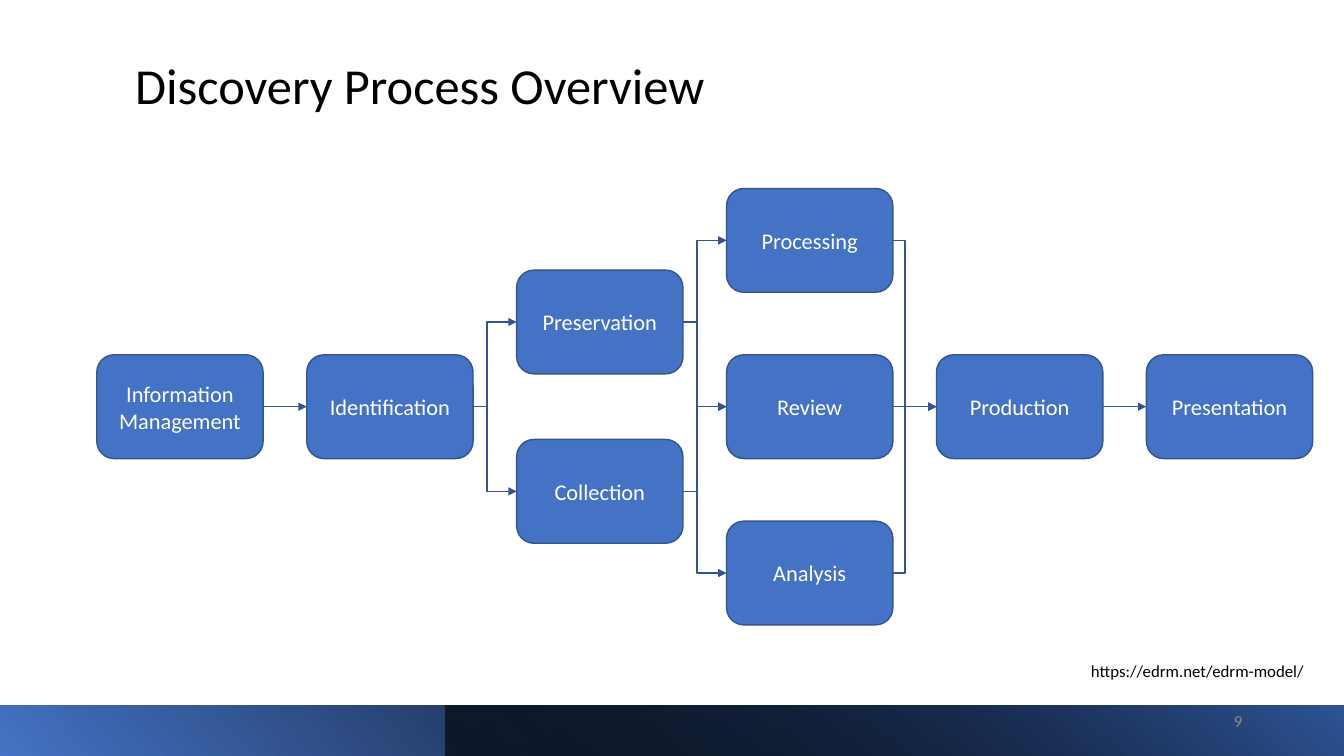
"""Build the discovery process overview slide."""
from lxml import etree
from pptx import Presentation
from pptx.dml.color import RGBColor
from pptx.enum.shapes import MSO_CONNECTOR, MSO_SHAPE
from pptx.enum.text import MSO_ANCHOR, PP_ALIGN
from pptx.oxml.ns import qn
from pptx.util import Inches, Pt

STRAIGHT, ELBOW = MSO_CONNECTOR.STRAIGHT, MSO_CONNECTOR.ELBOW
RECTANGLE, ROUNDED = MSO_SHAPE.RECTANGLE, MSO_SHAPE.ROUNDED_RECTANGLE
TOP, MIDDLE = MSO_ANCHOR.TOP, MSO_ANCHOR.MIDDLE
LEFT, CENTER, RIGHT = PP_ALIGN.LEFT, PP_ALIGN.CENTER, PP_ALIGN.RIGHT
COLORS = {
    "blue": "4472C4",
    "outline": "325491",
    "navy": "2F5597",
    "black": "000000",
    "white": "FFFFFF",
    "gray": "8C8C8C",
}


def color(name):
    """Return the named colour."""
    return RGBColor.from_string(COLORS[name])


def write(shape, text, size=16, ink="black", align=LEFT, anchor=TOP, spacing=None):
    """Fill a shape with one formatted paragraph."""
    frame = shape.text_frame
    frame.word_wrap = True
    frame.vertical_anchor = anchor
    para = frame.paragraphs[0]
    para.alignment = align
    para.line_spacing = spacing
    span = para.add_run()
    span.text = text
    span.font.name = "Calibri"
    span.font.size = Pt(size)
    span.font.color.rgb = color(ink)


deck = Presentation()
deck.slide_width, deck.slide_height = Inches(13.33), Inches(7.5)
page = deck.slides.add_slide(deck.slide_layouts[5])

title = page.shapes.title
title.left, title.top = Inches(1.24), Inches(0.55)
title.width, title.height = Inches(10.6), Inches(1.8)
write(title, "Discovery Process Overview", size=36, spacing=0.9)

BANDS = [
    (0, 13.33, 40, [(0, "blue"), (0.78, "black")], None),
    (4.42, 8.91, 50, [(0, "black"), (1, "navy")], 63),
]
for left, width, angle, stops, opacity in BANDS:
    band = page.shapes.add_shape(
        RECTANGLE, Inches(left), Inches(7), Inches(width), Inches(0.5))
    band.shadow.inherit = False
    band.line.fill.background()
    band.fill.gradient()
    band.fill.gradient_angle = angle
    for stop, (position, name) in zip(band.fill.gradient_stops, stops):
        stop.position = position
        stop.color.rgb = color(name)
    if opacity:
        first_color = band.element.find(".//" + qn("a:srgbClr"))
        etree.SubElement(first_color, qn("a:alpha"), val=str(opacity * 1000))

FIRST_LEFT, MIDDLE_TOP = 0.96, 3.52
COLUMN_STEP = (11.37 - FIRST_LEFT) / 5
STAGES = [
    [("Information Management", 0)],
    [("Identification", 0)],
    [("Preservation", -0.84), ("Collection", 0.84)],
    [("Processing", -1.65), ("Review", 0), ("Analysis", 1.65)],
    [("Production", 0)],
    [("Presentation", 0)],
]
boxes = {}
for column, stage in enumerate(STAGES):
    for name, offset in stage:
        box = page.shapes.add_shape(
            ROUNDED, Inches(FIRST_LEFT + column * COLUMN_STEP),
            Inches(MIDDLE_TOP + offset), Inches(1.65), Inches(1.03))
        box.shadow.inherit = False
        box.fill.solid()
        box.fill.fore_color.rgb = color("blue")
        box.line.color.rgb = color("outline")
        box.line.width = Pt(1)
        write(box, name, ink="white", align=CENTER, anchor=MIDDLE)
        boxes[name] = box

LINKS = [
    ("Information Management", "Identification", None),
    ("Identification", "Preservation", 0.32),
    ("Identification", "Collection", 0.32),
    ("Preservation", "Processing", 0.32),
    ("Preservation", "Review", 0.32),
    ("Collection", "Review", 0.32),
    ("Collection", "Analysis", 0.32),
    ("Processing", "Production", 0.28),
    ("Review", "Production", None),
    ("Analysis", "Production", 0.28),
    ("Production", "Presentation", None),
]
for source, target, bend in LINKS:
    link = page.shapes.add_connector(ELBOW if bend else STRAIGHT, 0, 0, 0, 0)
    link.begin_connect(boxes[source], 3)
    link.end_connect(boxes[target], 1)
    link.line.color.rgb = color("outline")
    link.line.width = Pt(1)
    properties = link.element.spPr
    etree.SubElement(properties.find(qn("a:ln")), qn("a:tailEnd"), type="triangle")
    etree.SubElement(properties, qn("a:effectLst"))
    if bend:
        etree.SubElement(properties.find(".//" + qn("a:avLst")), qn("a:gd"),
                         name="adj1", fmla=f"val {round(bend * 100000)}")

number = page.shapes.add_textbox(Inches(9.42), Inches(6.95), Inches(3), Inches(0.4))
write(number, "9", size=12, ink="gray", align=RIGHT, anchor=MIDDLE)
address = page.shapes.add_textbox(Inches(9.58), Inches(6.51), Inches(3.45), Inches(0.3))
write(address, "https://edrm.net/edrm-model/", size=12, align=RIGHT)

deck.save("out.pptx")
